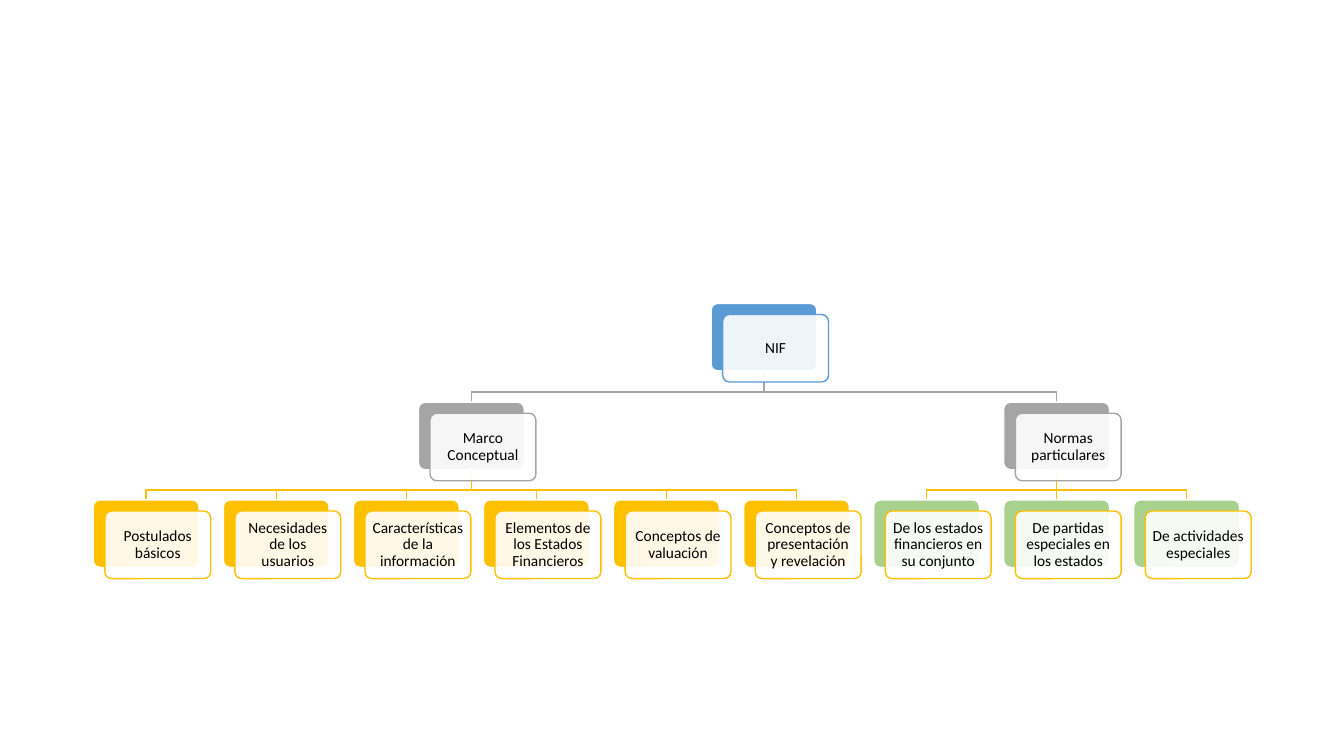
"""Build the NIF hierarchy slide: one root, two branches and nine leaves."""
from lxml.etree import SubElement
from pptx import Presentation
from pptx.dml.color import RGBColor
from pptx.enum.shapes import MSO_CONNECTOR, MSO_SHAPE
from pptx.enum.text import MSO_ANCHOR, PP_ALIGN
from pptx.oxml.ns import qn
from pptx.util import Inches, Pt

ROOT = "NIF"
BRANCHES = [
    ("Marco Conceptual", "gold", [
        "Postulados básicos",
        "Necesidades de los usuarios",
        "Características de la información",
        "Elementos de los Estados Financieros",
        "Conceptos de valuación",
        "Conceptos de presentación y revelación",
    ]),
    ("Normas particulares", "green", [
        "De los estados financieros en su conjunto",
        "De partidas especiales en los estados",
        "De actividades especiales",
    ]),
]
THEME = {
    "blue": RGBColor.from_string("5B9BD5"),
    "gray": RGBColor.from_string("A5A5A5"),
    "gold": RGBColor.from_string("FFC000"),
    "green": RGBColor.from_string("A9D18E"),
    "white": RGBColor.from_string("FFFFFF"),
    "black": RGBColor.from_string("000000"),
    "font": "Calibri",
    "size": Pt(11),
    "line": Pt(1),
    "veil": "90000",
}
ROW_TOPS = (3.01, 3.99, 4.96)
FIRST_CENTER, PITCH = 1.45, 1.29
CARD_W, CARD_H = 1.05, 0.67
OFFSET_X, OFFSET_Y = 0.115, 0.11
ELBOW_GAP = 0.1
FRAME_FORMAT = {
    "word_wrap": True, "vertical_anchor": MSO_ANCHOR.MIDDLE,
    "margin_left": Inches(0.05), "margin_right": Inches(0.05),
    "margin_top": Inches(0.05), "margin_bottom": Inches(0.05),
}
PARAGRAPH_FORMAT = {"alignment": PP_ALIGN.CENTER, "line_spacing": 0.9}
FONT_FORMAT = {"name": THEME["font"], "size": THEME["size"]}


def apply(target, values):
    for key, value in values.items():
        setattr(target, key, value)


def set_line(shape, color):
    shape.line.color.rgb = THEME[color]
    shape.line.width = THEME["line"]


def add_card(slide, left, top, fill, outline):
    card = slide.shapes.add_shape(
        MSO_SHAPE.ROUNDED_RECTANGLE, *map(Inches, (left, top, CARD_W, CARD_H)))
    card.adjustments[0] = 0.1
    card.shadow.inherit = False
    card.fill.solid()
    card.fill.fore_color.rgb = THEME[fill]
    set_line(card, outline)
    return card


def add_node(slide, label, center, level, fill, outline):
    left, top = center - CARD_W / 2, ROW_TOPS[level]
    backing = add_card(slide, left, top, fill, "white")
    front = add_card(slide, left + OFFSET_X, top + OFFSET_Y, "white", outline)
    veil_color = front.element.spPr.find(qn("a:solidFill"))[0]
    SubElement(veil_color, qn("a:alpha"), val=THEME["veil"])
    apply(front.text_frame, FRAME_FORMAT)
    paragraph = front.text_frame.paragraphs[0]
    paragraph.text = label
    apply(paragraph, PARAGRAPH_FORMAT)
    apply(paragraph.font, FONT_FORMAT)
    paragraph.font.color.rgb = THEME["black"]
    return backing


def add_link(slide, parent_x, child_x, level, color):
    """Draw a link to a child row and return it when it is straight."""
    start_y, end_y = ROW_TOPS[level - 1] + CARD_H, ROW_TOPS[level]
    if abs(parent_x - child_x) < 0.01:
        link = slide.shapes.add_connector(
            MSO_CONNECTOR.STRAIGHT,
            *map(Inches, (parent_x, start_y, child_x, end_y)))
        set_line(link, color)
        SubElement(link.element.spPr, qn("a:effectLst"))
        return link
    bend_y = end_y - ELBOW_GAP
    corners = [(parent_x, bend_y), (child_x, bend_y), (child_x, end_y)]
    route = slide.shapes.build_freeform(Inches(parent_x), Inches(start_y))
    route.add_line_segments(
        [(Inches(x), Inches(y)) for x, y in corners], close=False)
    elbow = route.convert_to_shape()
    elbow.fill.background()
    elbow.shadow.inherit = False
    set_line(elbow, color)
    return None


def main():
    deck = Presentation()
    apply(deck, {"slide_width": Inches(13.33), "slide_height": Inches(7.5)})
    slide = deck.slides.add_slide(deck.slide_layouts[6])

    tree, column = [], 0
    for branch, leaf_fill, leaves in BRANCHES:
        leaf_centers = [FIRST_CENTER + PITCH * (column + i)
                        for i in range(len(leaves))]
        branch_center = (leaf_centers[0] + leaf_centers[-1]) / 2
        tree.append((branch, branch_center, leaf_fill,
                     list(zip(leaves, leaf_centers))))
        column += len(leaves)
    root_center = (tree[0][1] + tree[-1][1]) / 2

    straight_links = {}
    for _, branch_center, _, leaves in tree:
        add_link(slide, root_center, branch_center, 1, "gray")
        for leaf, leaf_center in leaves:
            straight_links[leaf] = add_link(
                slide, branch_center, leaf_center, 2, "gold")

    add_node(slide, ROOT, root_center, 0, "blue", "blue")
    for branch, branch_center, leaf_fill, leaves in tree:
        parent = add_node(slide, branch, branch_center, 1, "gray", "gray")
        for leaf, leaf_center in leaves:
            child = add_node(slide, leaf, leaf_center, 2, leaf_fill, "gold")
            link = straight_links[leaf]
            if link is not None:
                link.begin_connect(parent, 2)
                link.end_connect(child, 0)

    deck.save("out.pptx")


if __name__ == "__main__":
    main()
